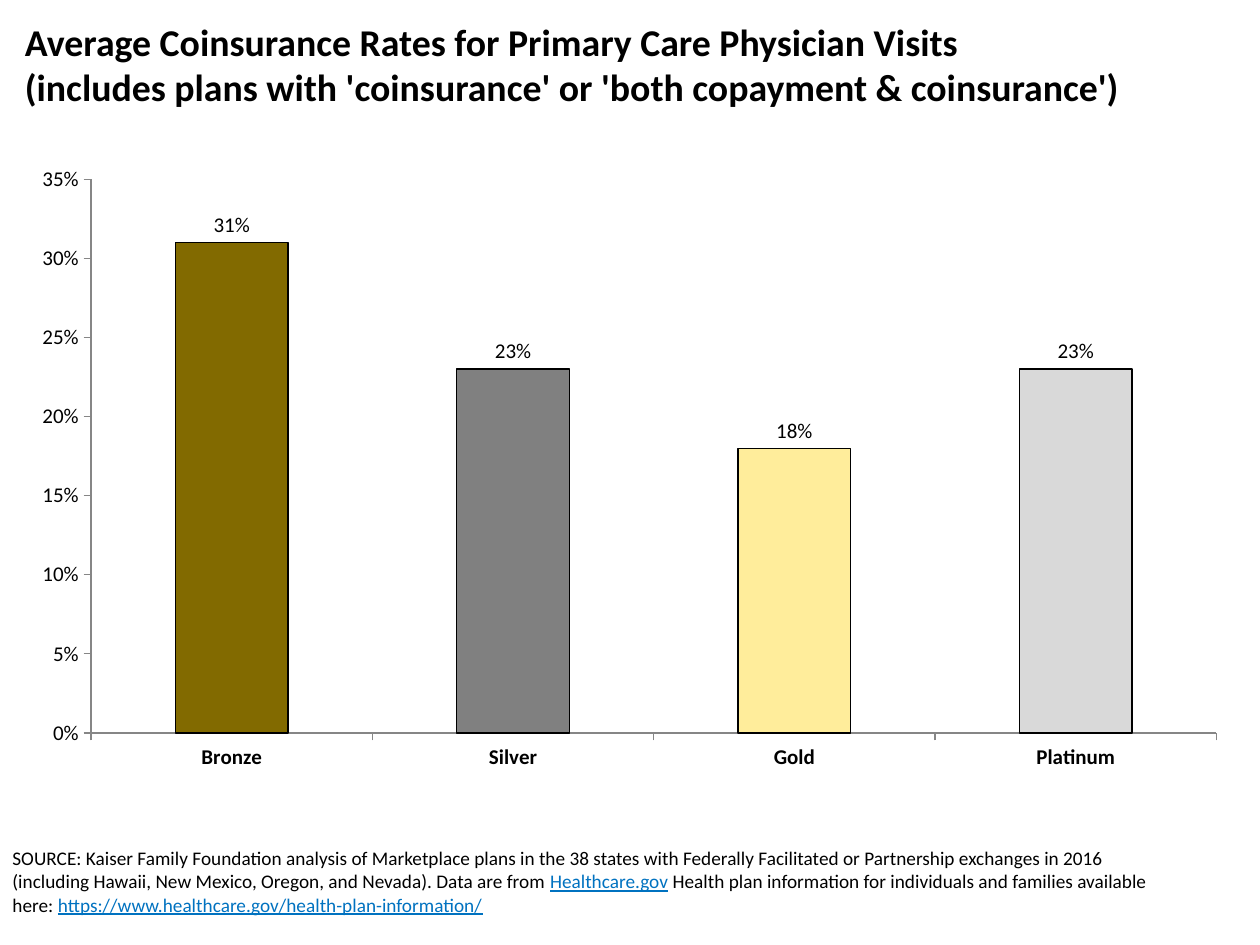
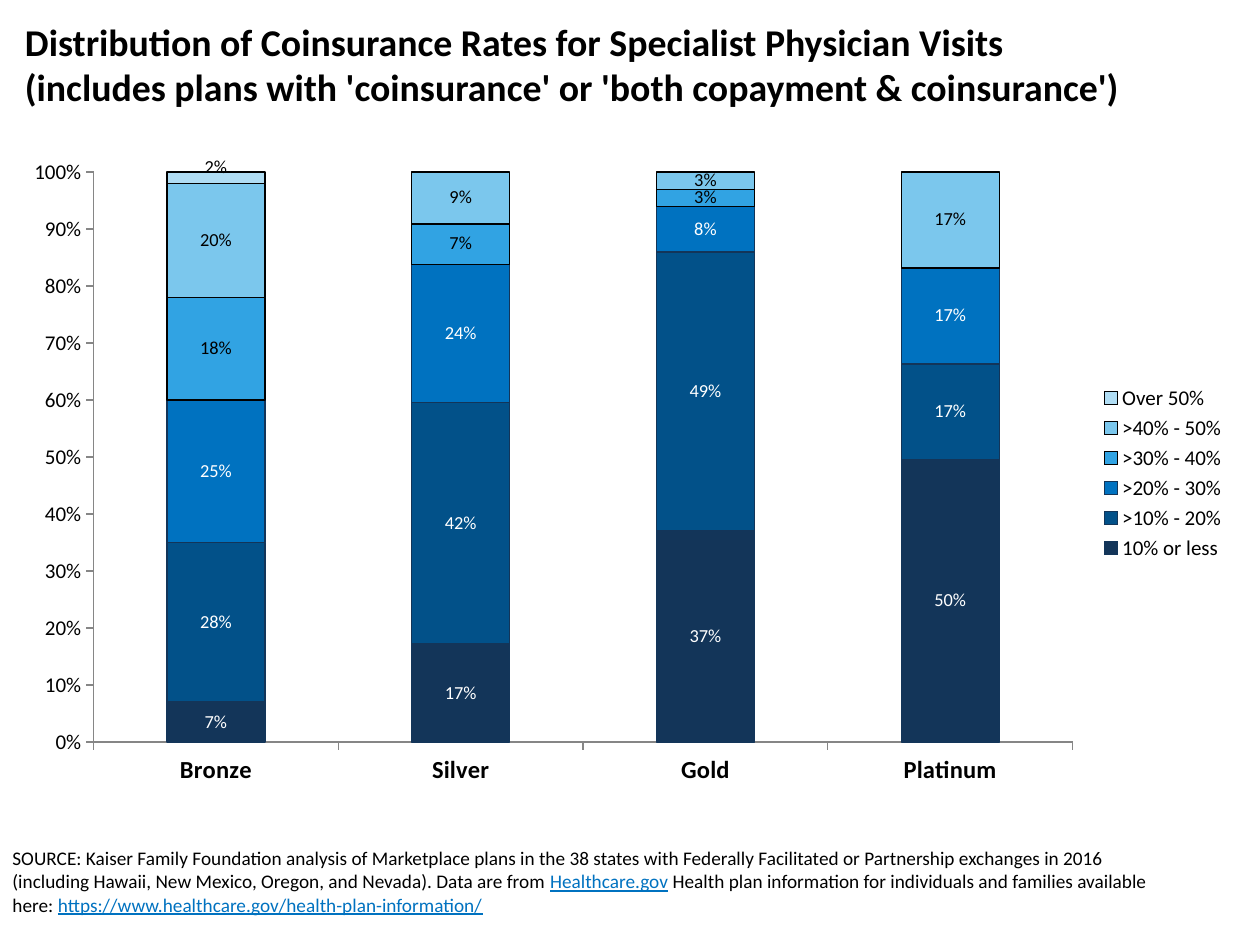
from dataclasses import dataclass

from lxml.etree import SubElement
from pptx import Presentation
from pptx.chart.data import CategoryChartData
from pptx.dml.color import RGBColor
from pptx.enum.chart import (XL_CHART_TYPE, XL_LABEL_POSITION,
                             XL_LEGEND_POSITION, XL_TICK_MARK)
from pptx.oxml.ns import qn
from pptx.util import Inches, Pt


@dataclass(frozen=True)
class Theme:
    font: str = "Calibri"
    text: str = "000000"
    light_text: str = "FFFFFF"
    link: str = "0072C0"
    axis: str = "868686"
    navy: str = "133559"
    metals: tuple = ("826A00", "808080", "FFED9B", "D9D9D9")
    title_size: float = 21.6
    source_size: float = 11
    chart_size: float = 12
    tier_size: float = 14
    share_size: float = 10.5


THEME = Theme()
TIERS = ("Bronze", "Silver", "Gold", "Platinum")
SCOPE = "(includes plans with 'coinsurance' or 'both copayment & coinsurance')"
SOURCE = (
    ("SOURCE: Kaiser Family Foundation analysis of Marketplace plans in the 38 "
     "states with Federally Facilitated or Partnership exchanges in 2016 "
     "(including Hawaii, New Mexico, Oregon, and Nevada). Data are from ", False),
    ("Healthcare.gov", True),
    (" Health plan information for individuals and families available here: ", False),
    ("https://www.healthcare.gov/health-plan-information/", True),
)


def add_text(slide, lines, *, left, top, width, height, size, bold=False):
    """Write lines, each a sequence of (text, is_link) pieces, in one paragraph."""
    frame = slide.shapes.add_textbox(
        Inches(left), Inches(top), Inches(width), Inches(height)).text_frame
    frame.word_wrap = True
    paragraph = frame.paragraphs[0]
    for number, pieces in enumerate(lines):
        if number:
            paragraph.add_line_break()
        for text, is_link in pieces:
            run = paragraph.add_run()
            run.text = text
            run.font.name = THEME.font
            run.font.size = Pt(size)
            run.font.bold = bold
            run.font.underline = is_link
            run.font.color.rgb = RGBColor.from_string(
                THEME.link if is_link else THEME.text)


def add_rate_chart(slide, kind, series, *, plot, top_rate, step, tier_size):
    """Add a column chart of rates by tier; plot is x, y, w, h as shares."""
    rates = CategoryChartData(number_format="0%")
    rates.categories = TIERS
    for name, values in series:
        rates.add_series(name, values)
    chart = slide.shapes.add_chart(
        kind, Inches(0.08), Inches(1.17), Inches(9.75), Inches(5.17), rates).chart
    chart.has_title = False
    chart.has_legend = False
    chart.font.name = THEME.font
    chart.font.size = Pt(THEME.chart_size)
    chart.font.color.rgb = RGBColor.from_string(THEME.text)
    chart.plots[0].vary_by_categories = False
    chart.plots[0].gap_width = 150

    for axis in (chart.category_axis, chart.value_axis):
        axis.has_major_gridlines = False
        axis.major_tick_mark = XL_TICK_MARK.OUTSIDE
        axis.minor_tick_mark = XL_TICK_MARK.NONE
        axis.format.line.color.rgb = RGBColor.from_string(THEME.axis)
        axis.format.line.width = Pt(0.75)
    chart.category_axis.tick_labels.font.bold = True
    chart.category_axis.tick_labels.font.size = Pt(tier_size)
    chart.value_axis.minimum_scale = 0
    chart.value_axis.maximum_scale = top_rate
    chart.value_axis.major_unit = step
    chart.value_axis.tick_labels.number_format = "0%"
    chart.value_axis.tick_labels.number_format_is_linked = False

    plot_area = chart.plots[0]._element.getparent()
    for old_layout in plot_area.findall(qn("c:layout")):
        plot_area.remove(old_layout)
    layout = SubElement(plot_area, qn("c:layout"))
    plot_area.insert(0, layout)
    manual = SubElement(layout, qn("c:manualLayout"))
    settings = [("layoutTarget", "inner"), ("xMode", "edge"), ("yMode", "edge")]
    for tag, value in settings + list(zip("xywh", plot)):
        SubElement(manual, qn(f"c:{tag}")).set("val", str(value))

    for bars in chart.plots[0].series:
        bars.invert_if_negative = False
        bars.format.line.color.rgb = RGBColor.from_string(THEME.text)
        bars.format.line.width = Pt(0.75)
        labels = bars.data_labels
        labels.show_value = True
        labels.number_format = "0%;;"  # zero rates stay unlabelled
        labels.number_format_is_linked = False
    return chart


prs = Presentation()
prs.slide_width = Inches(10)
prs.slide_height = Inches(7.5)

slides = []
for heading in ("Average Coinsurance Rates for Primary Care Physician Visits",
                "Distribution of Coinsurance Rates for Specialist Physician Visits"):
    slide = prs.slides.add_slide(prs.slide_layouts[6])
    add_text(slide, [SOURCE], left=0, top=6.67, width=9.25, height=0.84,
             size=THEME.source_size)
    add_text(slide, [[(heading, False)], [(SCOPE, False)]], left=0.1, top=0.1,
             width=9.8, height=1, size=THEME.title_size, bold=True)
    slides.append(slide)
average_slide, distribution_slide = slides

# Average rate by tier
average = add_rate_chart(
    average_slide, XL_CHART_TYPE.COLUMN_CLUSTERED,
    [("Series 1", (0.31, 0.23, 0.18, 0.23))],
    plot=(0.066, 0.049, 0.916, 0.85), top_rate=0.35, step=0.05,
    tier_size=THEME.chart_size)
average_bars = average.plots[0].series[0]
average_bars.format.fill.solid()
average_bars.format.fill.fore_color.rgb = RGBColor.from_string(THEME.navy)
average_bars.data_labels.position = XL_LABEL_POSITION.OUTSIDE_END
for tier, metal in enumerate(THEME.metals):
    bar = average_bars.points[tier].format
    bar.fill.solid()
    bar.fill.fore_color.rgb = RGBColor.from_string(metal)
    bar.line.color.rgb = RGBColor.from_string(THEME.text)
    bar.line.width = Pt(0.75)

# Share of plans in each rate band: name, shares, fill, line, label colour
BANDS = (
    ("10% or less", (0.07, 0.17, 0.37, 0.5), THEME.navy, THEME.navy, THEME.light_text),
    (">10% - 20%", (0.28, 0.42, 0.49, 0.17), "025189", THEME.navy, THEME.light_text),
    (">20% - 30%", (0.25, 0.24, 0.08, 0.17), "0072C0", THEME.navy, THEME.light_text),
    (">30% - 40%", (0.18, 0.07, 0.03, 0), "31A3E3", THEME.text, THEME.text),
    (">40% - 50%", (0.2, 0.09, 0.03, 0.17), "7BC7ED", THEME.text, THEME.text),
    ("Over 50%", (0.02, 0, 0, 0), "B0DDF4", THEME.text, THEME.text),
)
distribution = add_rate_chart(
    distribution_slide, XL_CHART_TYPE.COLUMN_STACKED_100,
    [band[:2] for band in BANDS],
    plot=(0.068, 0.038, 0.797, 0.875), top_rate=1, step=0.1,
    tier_size=THEME.tier_size)
distribution.plots[0].overlap = 100
distribution.has_legend = True
distribution.legend.position = XL_LEGEND_POSITION.RIGHT
distribution.legend.include_in_layout = False
for bars, (name, shares, fill, line, label) in zip(distribution.plots[0].series, BANDS):
    bars.format.fill.solid()
    bars.format.fill.fore_color.rgb = RGBColor.from_string(fill)
    bars.format.line.color.rgb = RGBColor.from_string(line)
    bars.data_labels.font.size = Pt(THEME.share_size)
    bars.data_labels.font.color.rgb = RGBColor.from_string(label)
    bars.data_labels.position = (XL_LABEL_POSITION.INSIDE_BASE if name == "Over 50%"
                                 else XL_LABEL_POSITION.CENTER)

prs.save("out.pptx")
